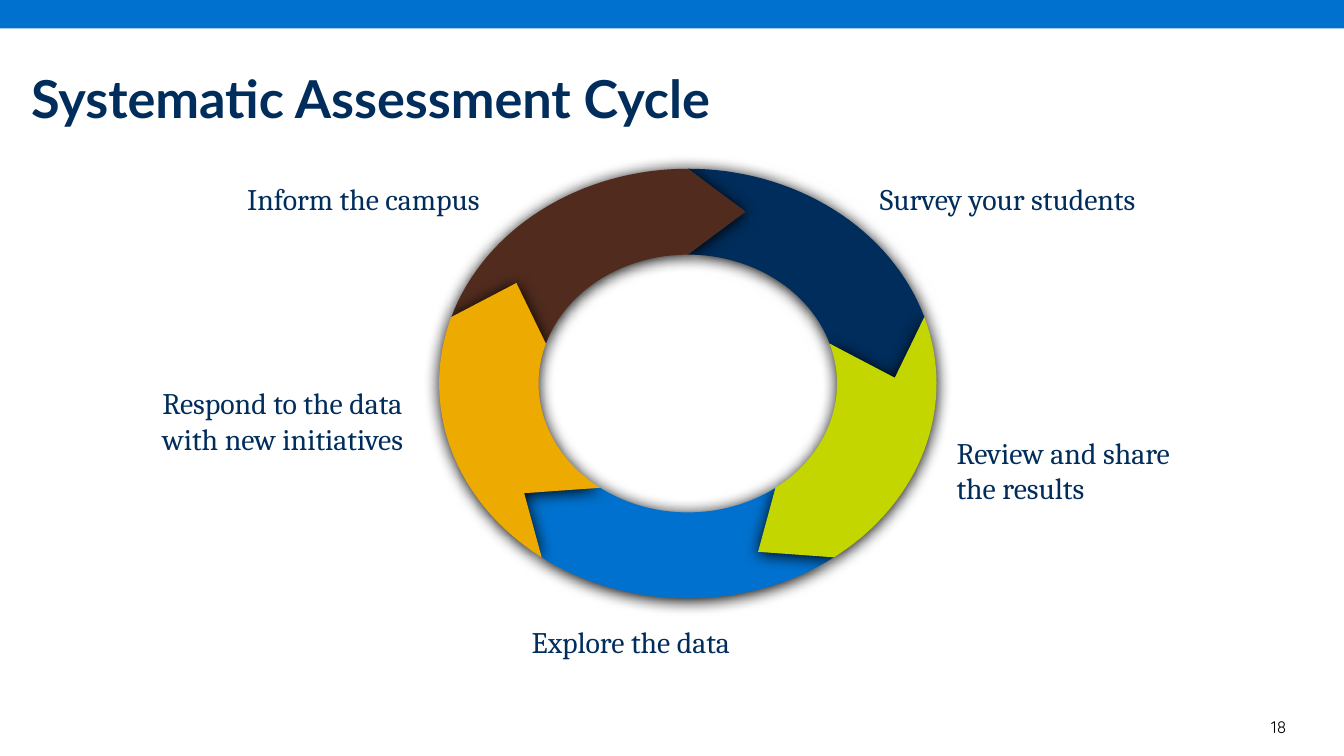
from dataclasses import dataclass
from math import cos, radians, sin

from lxml import etree
from pptx import Presentation
from pptx import util as u
from pptx.dml.color import RGBColor
from pptx.enum import shapes, text
from pptx.oxml import ns


@dataclass(frozen=True)
class Theme:
    navy: str = "002D5C"
    blue: str = "0071CE"
    brown: str = "512C1E"
    gold: str = "EDAA00"
    lime: str = "C3D600"
    black: str = "000000"
    title_font: str = "Lato"
    label_font: str = "Cambria"
    number_font: str = "Quicksand"
    title_size: float = 28
    label_size: float = 16
    number_size: float = 9


@dataclass(frozen=True)
class Box:
    left: float
    top: float
    width: float
    height: float

    def lengths(self) -> tuple:
        return tuple(u.Cm(side) for side in (self.left, self.top, self.width, self.height))


@dataclass(frozen=True)
class Ring:
    center_x: float
    center_y: float
    radius_x: float
    radius_y: float
    hole: float
    head: float
    segment_count: int

    def point(self, angle: float, scale: float = 1) -> tuple:
        turn = radians(angle)
        return (
            self.center_x + scale * self.radius_x * sin(turn),
            self.center_y - scale * self.radius_y * cos(turn),
        )

    def tip(self, angle: float) -> tuple:
        middle = (1 + self.hole) / 2
        x, y = self.point(angle, middle)
        turn = radians(angle)
        reach = middle * self.head
        return x + reach * self.radius_x * cos(turn), y + reach * self.radius_y * sin(turn)

    def outline(self, index: int, steps: int = 32) -> list:
        sweep = 360 / self.segment_count
        angles = [sweep * (index + step / steps) for step in range(steps + 1)]
        outer = [self.point(angle) for angle in angles]
        inner = [self.point(angle, self.hole) for angle in reversed(angles)]
        return [*outer, self.tip(angles[-1]), *inner, self.tip(angles[0])]


@dataclass(frozen=True)
class Segment:
    index: int
    color: str


@dataclass(frozen=True)
class Label:
    words: str
    box: Box


THEME = Theme()
RING = Ring(13, 7.25, 4.7, 4.06, hole=0.6, head=0.29, segment_count=5)
SEGMENTS = [
    Segment(0, THEME.navy),
    Segment(2, THEME.blue),
    Segment(4, THEME.brown),
    Segment(3, THEME.gold),
    Segment(1, THEME.lime),
]
LABELS = [
    Label("Survey your students", Box(16.38, 3.28, 5.66, 2.06)),
    Label("Inform the campus", Box(4.42, 3.28, 5.41, 0.94)),
    Label("Review and share the results", Box(17.83, 8.08, 4.7, 2.92)),
    Label("Explore the data", Box(9.8, 11.66, 5.79, 1.19)),
    Label("Respond to the data with new initiatives", Box(2.82, 7.14, 5.77, 2.92)),
]


def paint(shape, color: str) -> None:
    shape.shadow.inherit = False
    shape.fill.solid()
    shape.fill.fore_color.rgb = RGBColor.from_string(color)
    shape.line.fill.background()


def add_shadow(shape) -> None:
    effects = shape._element.spPr.find(ns.qn("a:effectLst"))
    shadow = etree.SubElement(
        effects,
        ns.qn("a:outerShdw"),
        blurRad=str(u.Pt(8.5)),
        dist=str(u.Pt(1)),
        dir="5400000",
        algn="ctr",
        rotWithShape="0",
    )
    etree.SubElement(shadow, ns.qn("a:srgbClr"), val=THEME.black)


def add_segment(slide, segment: Segment) -> None:
    points = [(u.Cm(x), u.Cm(y)) for x, y in RING.outline(segment.index)]
    builder = slide.shapes.build_freeform(*points[0])
    builder.add_line_segments(points[1:], close=True)
    shape = builder.convert_to_shape()
    paint(shape, segment.color)
    add_shadow(shape)


def add_text(
    slide,
    words: str,
    box: Box,
    *,
    font: str = THEME.label_font,
    size: float = THEME.label_size,
    color: str = THEME.navy,
    bold: bool = False,
    align=text.PP_ALIGN.LEFT,
    anchor=text.MSO_ANCHOR.TOP,
    inset: tuple = (0.25, 0.13),
) -> None:
    frame = slide.shapes.add_textbox(*box.lengths()).text_frame
    frame.word_wrap = True
    frame.vertical_anchor = anchor
    frame.margin_left = frame.margin_right = u.Cm(inset[0])
    frame.margin_top = frame.margin_bottom = u.Cm(inset[1])
    paragraph = frame.paragraphs[0]
    paragraph.alignment = align
    run = paragraph.add_run()
    run.text = words
    run.font.name = font
    run.font.size = u.Pt(size)
    run.font.bold = bold
    run.font.color.rgb = RGBColor.from_string(color)


def main() -> None:
    presentation = Presentation()
    presentation.slide_width = u.Cm(25.4)
    presentation.slide_height = u.Cm(14.29)
    slide = presentation.slides.add_slide(presentation.slide_layouts[6])

    add_text(
        slide, "18", Box(23.19, 13.41, 1.37, 0.64), font=THEME.number_font,
        size=THEME.number_size, color=THEME.black, align=text.PP_ALIGN.RIGHT,
    )
    band = slide.shapes.add_shape(shapes.MSO_SHAPE.RECTANGLE, *Box(0, 0, 25.4, 0.54).lengths())
    paint(band, THEME.blue)
    add_text(
        slide, "Systematic Assessment Cycle", Box(0.41, 1.19, 24.61, 1.3),
        font=THEME.title_font, size=THEME.title_size, bold=True,
        anchor=text.MSO_ANCHOR.MIDDLE, inset=(0.18, 0.1),
    )
    for segment in SEGMENTS:
        add_segment(slide, segment)
    for label in LABELS:
        add_text(slide, label.words, label.box)

    presentation.save("out.pptx")


if __name__ == "__main__":
    main()
